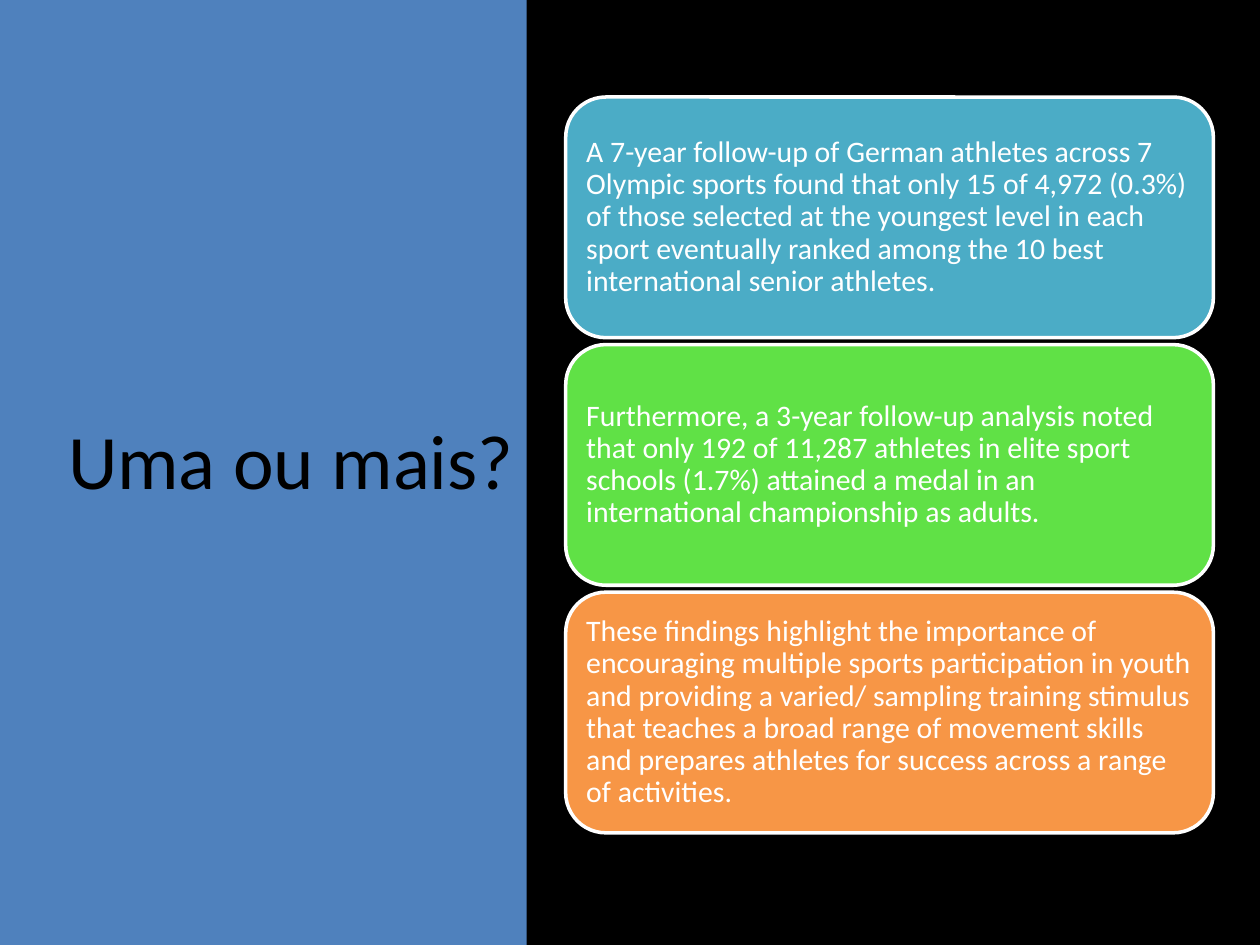
"""Build the slide "Uma ou mais?" with a title panel and three stacked findings."""
import pptx
import pptx.util
import pptx.dml.color
import pptx.enum.shapes
import pptx.enum.text

Inches = pptx.util.Inches
Pt = pptx.util.Pt
RGB = pptx.dml.color.RGBColor.from_string
SHAPES = pptx.enum.shapes.MSO_SHAPE
ALIGN = pptx.enum.text.PP_ALIGN
MIDDLE = pptx.enum.text.MSO_ANCHOR.MIDDLE

COLORS = {
    "background": "000000",
    "panel": "4F81BD",
    "title": "000000",
    "light": "FFFFFF",
    "teal": "4BACC6",
    "green": "60E146",
    "orange": "F79646",
}
FINDINGS = [
    ("teal", "A 7-year follow-up of German athletes across 7 Olympic sports found that "
             "only 15 of 4,972 (0.3%) of those selected at the youngest level in each sport "
             "eventually ranked among the 10 best international senior athletes."),
    ("green", "Furthermore, a 3-year follow-up analysis noted that only 192 of 11,287 "
              "athletes in elite sport schools (1.7%) attained a medal in an international "
              "championship as adults."),
    ("orange", "These findings highlight the importance of encouraging multiple sports "
               "participation in youth and providing a varied/ sampling training stimulus "
               "that teaches a broad range of movement skills and prepares athletes for "
               "success across a range of activities."),
]
PANEL_WIDTH = 4.18
TITLE_LEFT, TITLE_TOP, TITLE_HEIGHT = 0.43, 0.68, 6.02
CARD_LEFT, CARD_TOP = 4.49, 0.77
CARD_WIDTH, CARD_HEIGHT, ROW_PITCH = 5.14, 1.91, 1.965


def write(frame, text, size, color, align):
    frame.text = text
    frame.word_wrap = True
    frame.vertical_anchor = MIDDLE
    paragraph = frame.paragraphs[0]
    paragraph.alignment = align
    paragraph.line_spacing = 0.9
    font = paragraph.runs[0].font
    font.name = "Calibri"
    font.size = Pt(size)
    font.color.rgb = RGB(COLORS[color])


deck = pptx.Presentation()
deck.slide_width, deck.slide_height = Inches(10), Inches(7.5)
slide = deck.slides.add_slide(deck.slide_layouts[5])
slide.background.fill.solid()
slide.background.fill.fore_color.rgb = RGB(COLORS["background"])

panel = slide.shapes.add_shape(SHAPES.RECTANGLE, 0, 0, Inches(PANEL_WIDTH), deck.slide_height)
panel.shadow.inherit = False
panel.fill.solid()
panel.fill.fore_color.rgb = RGB(COLORS["panel"])
panel.line.fill.background()

title = slide.shapes.title
title.left, title.top = Inches(TITLE_LEFT), Inches(TITLE_TOP)
title.width, title.height = Inches(PANEL_WIDTH - TITLE_LEFT), Inches(TITLE_HEIGHT)
write(title.text_frame, "Uma ou mais?", 44, "title", ALIGN.RIGHT)
title.element.addprevious(panel.element)

for row, (color, finding) in enumerate(FINDINGS):
    card = slide.shapes.add_shape(
        SHAPES.ROUNDED_RECTANGLE,
        Inches(CARD_LEFT), Inches(CARD_TOP + row * ROW_PITCH),
        Inches(CARD_WIDTH), Inches(CARD_HEIGHT))
    card.shadow.inherit = False
    card.fill.solid()
    card.fill.fore_color.rgb = RGB(COLORS[color])
    card.line.color.rgb = RGB(COLORS["light"])
    card.line.width = Pt(2)
    frame = card.text_frame
    frame.margin_left = frame.margin_right = Inches(0.07)
    frame.margin_top = frame.margin_bottom = Inches(0.07)
    write(frame, finding, 17, "light", ALIGN.LEFT)

deck.save("out.pptx")
